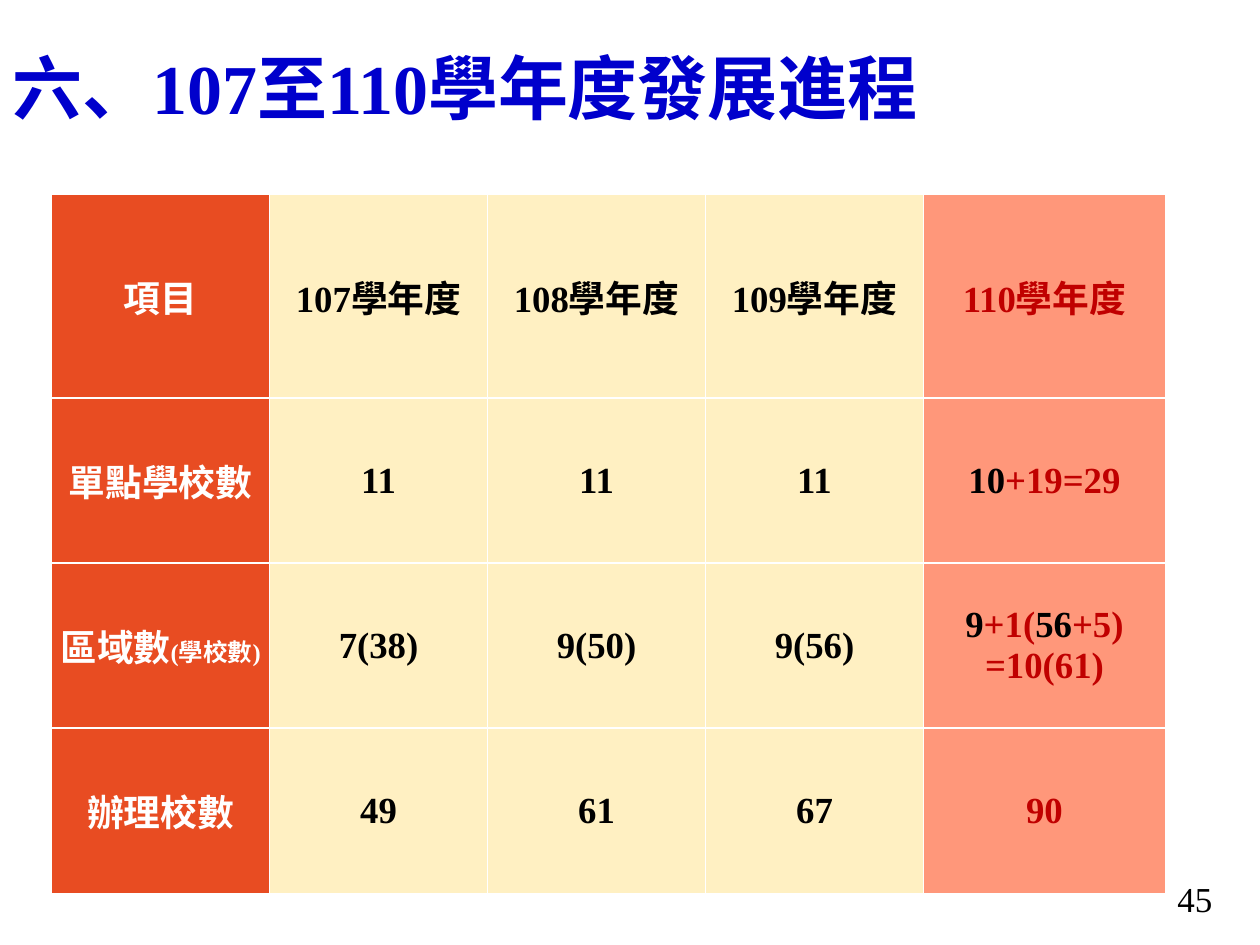
from lxml.etree import SubElement
from pptx import Presentation
from pptx.dml.color import RGBColor
from pptx.enum.text import MSO_ANCHOR as Anchor, PP_ALIGN as Align
from pptx.oxml.ns import qn
from pptx.util import Inches, Pt

COLORS = {
    "title": "0000CC", "black": "000000", "white": "FFFFFF", "red": "C00000",
    "label": "E84C22", "past": "FFF0C2", "latest": "FF977A",
}
COLUMN_WIDTHS = [17.3] * 4 + [19.2]
ROW_HEIGHTS = [16.2] + [13.1] * 3
PROGRESS = [
    ["項目", "107學年度", "108學年度", "109學年度", [[("110學年度", "red")]]],
    ["單點學校數", "11", "11", "11", [[("10", "black"), ("+19=29", "red")]]],
    [[[("區域數", "white"), ("(學校數)", "white", 14)]], "7(38)", "9(50)", "9(56)",
     [[("9", "black"), ("+1(", "red"), ("56", "black"), ("+5)", "red")],
      [("=10(61)", "red")]]],
    ["辦理校數", "49", "61", "67", [[("90", "red")]]],
]


class SlideBuilder:
    """Holds the style and the current slide on a grid of 100 columns by 75 rows."""

    def __init__(self, deck, font="Times New Roman"):
        self.font = font
        self.page = deck.slides.add_slide(deck.slide_layouts[6])
        self.unit = deck.slide_width / 100

    def grid(self, *lengths):
        return [round(length * self.unit) for length in lengths]

    def color(self, name):
        return RGBColor.from_string(COLORS[name])

    def style(self, span, size, color, bold=True):
        span.font.name = self.font
        span.font.size = Pt(size)
        span.font.bold = bold
        span.font.color.rgb = self.color(color)

    def text(self, area, words, size, color, bold=True, align=Align.LEFT):
        frame = self.page.shapes.add_textbox(*self.grid(*area)).text_frame
        frame.word_wrap = True
        frame.vertical_anchor = Anchor.MIDDLE
        para = frame.paragraphs[0]
        para.text = words
        para.alignment = align
        self.style(para.runs[0], size, color, bold)
        return para

    def title(self, area, words):
        para = self.text(area, words, 40, "title")
        para.line_spacing = 0.9
        hanging = Inches(1.08)
        properties = para._p.get_or_add_pPr()
        properties.set("marL", str(hanging))
        properties.set("indent", str(-hanging))

    def borders(self, cell):
        properties = cell._tc.get_or_add_tcPr()
        for position, side in enumerate(("lnL", "lnR", "lnT", "lnB")):
            line = SubElement(properties, qn(f"a:{side}"), w=str(Pt(1)))
            properties.insert(position, line)
            fill = SubElement(line, qn("a:solidFill"))
            SubElement(fill, qn("a:srgbClr"), val=COLORS["white"])

    def cell(self, cell, content, fill, color, narrow):
        cell.fill.solid()
        cell.fill.fore_color.rgb = self.color(fill)
        cell.vertical_anchor = Anchor.MIDDLE
        if narrow:
            cell.margin_left = cell.margin_right = Inches(0.07)
            cell.margin_top = cell.margin_bottom = Inches(0.04)
        lines = [[(content, color)]] if isinstance(content, str) else content
        frame = cell.text_frame
        for index, line in enumerate(lines):
            para = frame.add_paragraph() if index else frame.paragraphs[0]
            para.alignment = Align.CENTER
            for words, tone, *size in line:
                span = para.add_run()
                span.text = words
                self.style(span, size[0] if size else 21, tone)
        self.borders(cell)

    def table(self, left, top, rows):
        area = self.grid(left, top, sum(COLUMN_WIDTHS), sum(ROW_HEIGHTS))
        table = self.page.shapes.add_table(len(rows), len(rows[0]), *area).table
        for column, width in zip(table.columns, self.grid(*COLUMN_WIDTHS)):
            column.width = width
        for row, height in zip(table.rows, self.grid(*ROW_HEIGHTS)):
            row.height = height
        fills = ["label"] + ["past"] * 3 + ["latest"]
        for r, row in enumerate(rows):
            for c, content in enumerate(row):
                color = "black" if c else "white"
                self.cell(table.cell(r, c), content, fills[c], color, r == 0 or c < 2)


def main():
    deck = Presentation()
    deck.slide_width, deck.slide_height = Inches(10), Inches(7.5)
    builder = SlideBuilder(deck)
    builder.text((74.7, 69.3, 22.5, 4), "45", 20, "black", bold=False, align=Align.RIGHT)
    builder.table(4.1, 15.4, PROGRESS)
    builder.title((0, 0, 100, 14.5), "六、107至110學年度發展進程")
    deck.save("out.pptx")


if __name__ == "__main__":
    main()
